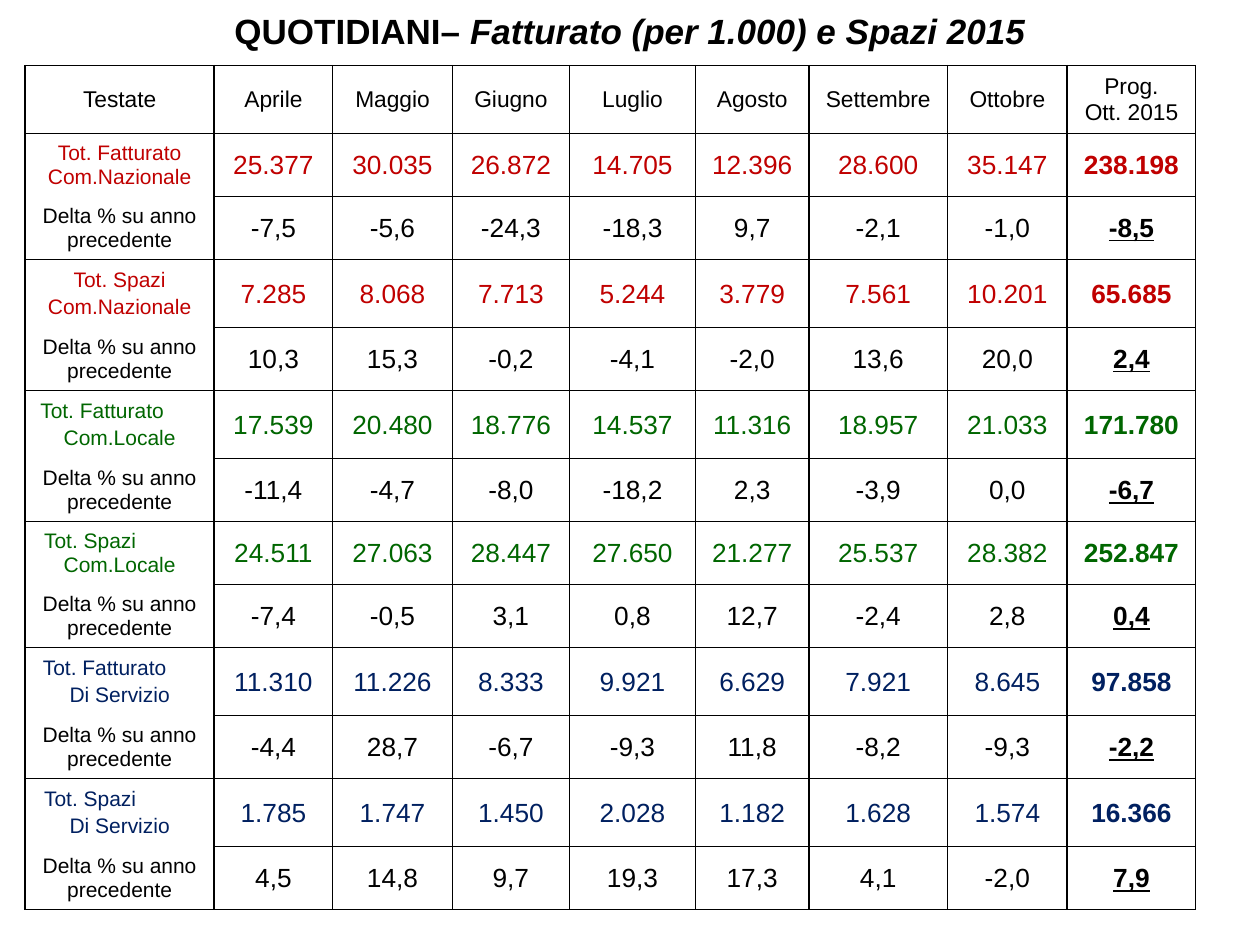
"""Build the newspaper revenue and space table for 2015."""
from lxml.etree import SubElement
from pptx import Presentation
from pptx.dml.color import RGBColor
from pptx.enum.text import MSO_ANCHOR, MSO_AUTO_SIZE, PP_ALIGN
from pptx.oxml.ns import qn
from pptx.util import Inches, Pt

FONT = "Arial"
BLACK, WHITE, RED, GREEN, NAVY = "000000", "FFFFFF", "C00000", "006600", "002060"
TITLE = [("QUOTIDIANI– ", False), ("Fatturato (per 1.000) e Spazi 2015", True)]
HEADERS = ["Testate", "Aprile", "Maggio", "Giugno", "Luglio", "Agosto",
           "Settembre", "Ottobre", "Prog.\nOtt. 2015"]
DELTA_LABEL = "Delta % su anno precedente"
COLUMN_WIDTHS = [1.5, 0.94, 0.95, 0.93, 1, 0.9, 1.1, 0.95, 1.02]
HEADER_HEIGHT, DELTA_HEIGHT = 0.54, 0.5
WIDE_INSETS = (0.1, 0.05, 0.1, 0.05)
NARROW_INSETS = (0.01, 0.01, 0.01, 0)

# label, colour, row height, first-line indent (None = centred), gap, totals, deltas
GROUPS = [
    ("Tot. Fatturato Com.Nazionale", RED, 0.5, None, 0,
     "25.377 30.035 26.872 14.705 12.396 28.600 35.147 238.198",
     "-7,5 -5,6 -24,3 -18,3 9,7 -2,1 -1,0 -8,5"),
    ("Tot. Spazi\nCom.Nazionale", RED, 0.54, None, 2.4,
     "7.285 8.068 7.713 5.244 3.779 7.561 10.201 65.685",
     "10,3 15,3 -0,2 -4,1 -2,0 13,6 20,0 2,4"),
    ("Tot. Fatturato\nCom.Locale", GREEN, 0.54, 0.02, 2.4,
     "17.539 20.480 18.776 14.537 11.316 18.957 21.033 171.780",
     "-11,4 -4,7 -8,0 -18,2 2,3 -3,9 0,0 -6,7"),
    ("Tot. Spazi\nCom.Locale", GREEN, 0.5, 0.05, 0,
     "24.511 27.063 28.447 27.650 21.277 25.537 28.382 252.847",
     "-7,4 -0,5 3,1 0,8 12,7 -2,4 2,8 0,4"),
    ("Tot. Fatturato\nDi Servizio", NAVY, 0.54, 0.04, 2.4,
     "11.310 11.226 8.333 9.921 6.629 7.921 8.645 97.858",
     "-4,4 28,7 -6,7 -9,3 11,8 -8,2 -9,3 -2,2"),
    ("Tot. Spazi\nDi Servizio", NAVY, 0.54, 0.05, 2.4,
     "1.785 1.747 1.450 2.028 1.182 1.628 1.574 16.366",
     "4,5 14,8 9,7 19,3 17,3 4,1 -2,0 7,9"),
]


def style_font(font, size, color, bold=False, underline=False):
    font.name, font.size = FONT, Pt(size)
    font.bold, font.underline = bold, underline
    font.color.rgb = RGBColor.from_string(color)


def set_borders(cell, open_sides):
    properties = cell._tc.get_or_add_tcPr()
    for side in "LRTB":
        line = SubElement(properties, qn(f"a:ln{side}"), w=str(Pt(1)))
        if side in open_sides:
            SubElement(line, qn("a:noFill"))
        else:
            fill = SubElement(line, qn("a:solidFill"))
            SubElement(fill, qn("a:srgbClr"), val=BLACK)


def fill_cell(cell, text, size, color, insets, gap=0, open_sides="", **emphasis):
    set_borders(cell, open_sides)
    cell.fill.solid()
    cell.fill.fore_color.rgb = RGBColor.from_string(WHITE)
    cell.vertical_anchor = MSO_ANCHOR.MIDDLE
    (cell.margin_left, cell.margin_top,
     cell.margin_right, cell.margin_bottom) = map(Inches, insets)
    cell.text_frame.text = text
    for index, para in enumerate(cell.text_frame.paragraphs):
        para.alignment = PP_ALIGN.CENTER
        if index:
            para.space_before = Pt(gap)
        for span in para.runs:
            style_font(span.font, size, color, **emphasis)


def indent_first_line(cell, indent):
    para = cell.text_frame.paragraphs[0]
    para.alignment = PP_ALIGN.LEFT
    para._p.get_or_add_pPr().set("marL", str(Inches(indent)))


def fill_values(table, row, values, color, underline_last):
    for column, value in enumerate(values.split(), 1):
        last = column == len(COLUMN_WIDTHS) - 1
        fill_cell(table.cell(row, column), value, 15, color, NARROW_INSETS,
                  bold=last, underline=last and underline_last)


def add_title(page):
    title = page.shapes.title
    title.left, title.top, title.width, title.height = map(Inches, (0, 0.02, 10, 0.44))
    frame = title.text_frame
    frame.auto_size = MSO_AUTO_SIZE.NONE
    frame.vertical_anchor = MSO_ANCHOR.MIDDLE
    para = frame.paragraphs[0]
    para.alignment = PP_ALIGN.CENTER
    for text, italic in TITLE:
        span = para.add_run()
        span.text = text
        style_font(span.font, 20, BLACK, bold=True)
        span.font.italic = italic


def add_table(page):
    heights = [HEADER_HEIGHT]
    for group in GROUPS:
        heights += [group[2], DELTA_HEIGHT]
    table = page.shapes.add_table(
        len(heights), len(COLUMN_WIDTHS), Inches(0.2), Inches(0.52),
        Inches(sum(COLUMN_WIDTHS)), Inches(sum(heights))).table
    table.first_row = table.horz_banding = False
    for column, width in zip(table.columns, COLUMN_WIDTHS):
        column.width = Inches(width)
    for row, height in zip(table.rows, heights):
        row.height = Inches(height)

    for column, header in enumerate(HEADERS):
        fill_cell(table.cell(0, column), header, 13, BLACK, WIDE_INSETS)
    for index, (label, color, _, indent, gap, totals, deltas) in enumerate(GROUPS):
        row = 1 + 2 * index
        label_cell = table.cell(row, 0)
        fill_cell(label_cell, label, 12, color, WIDE_INSETS, gap, open_sides="B")
        if indent is not None:
            indent_first_line(label_cell, indent)
        fill_cell(table.cell(row + 1, 0), DELTA_LABEL, 12, BLACK, WIDE_INSETS,
                  open_sides="T")
        fill_values(table, row, totals, color, underline_last=False)
        fill_values(table, row + 1, deltas, BLACK, underline_last=True)


def main():
    deck = Presentation()
    deck.slide_width, deck.slide_height = Inches(10), Inches(7.5)
    page = deck.slides.add_slide(deck.slide_layouts[5])
    add_title(page)
    add_table(page)
    deck.save("out.pptx")


if __name__ == "__main__":
    main()
